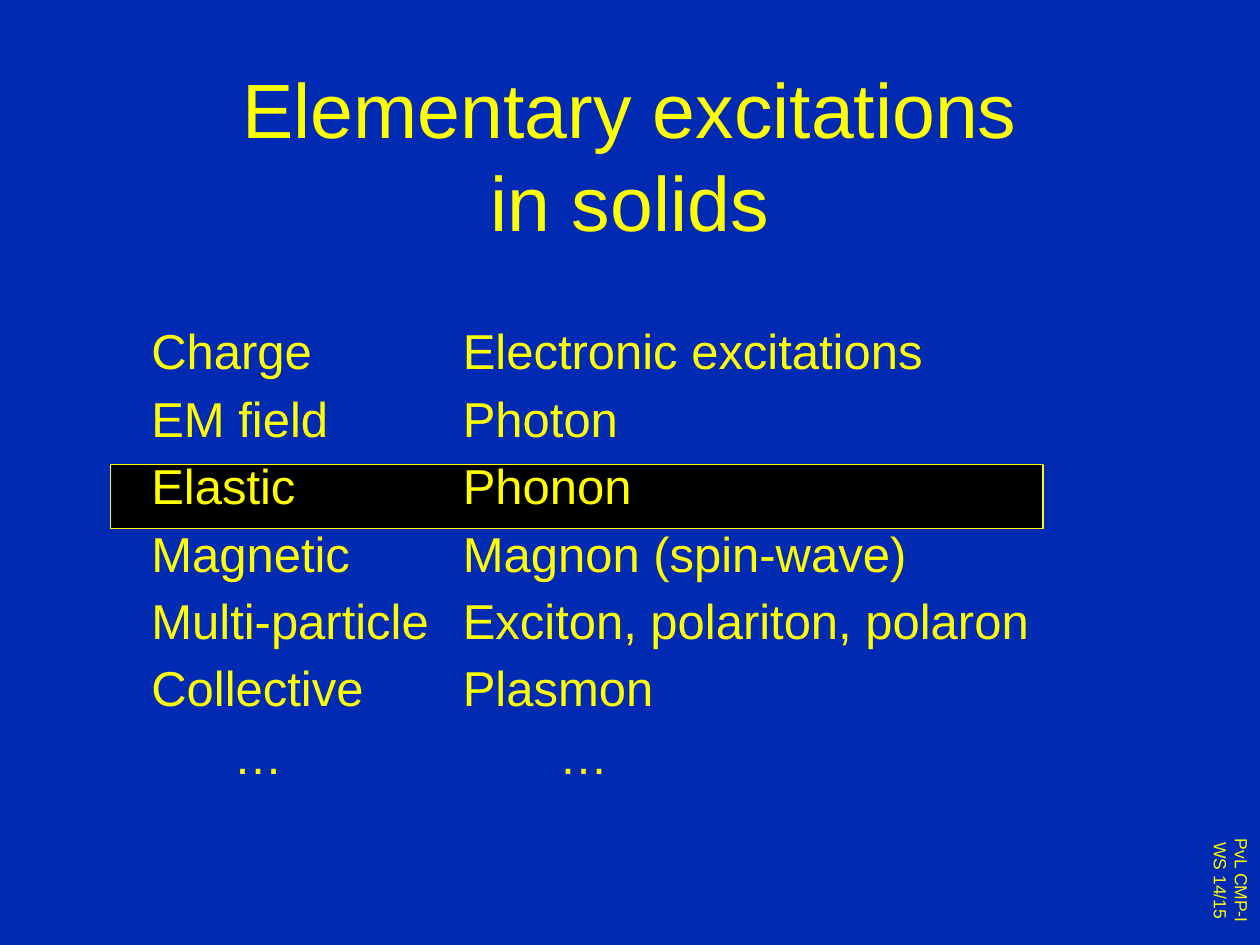
from pptx import Presentation
from pptx.dml.color import RGBColor
from pptx.enum.shapes import MSO_SHAPE
from pptx.enum.text import MSO_ANCHOR, PP_ALIGN
from pptx.oxml.ns import qn
from pptx.util import Pt

CENTER = PP_ALIGN.CENTER
MIDDLE = MSO_ANCHOR.MIDDLE
TOP = MSO_ANCHOR.TOP
RECTANGLE = MSO_SHAPE.RECTANGLE

BLUE = RGBColor(0x00, 0x2A, 0xB2)
YELLOW = RGBColor(0xFF, 0xFF, 0x00)
BLACK = RGBColor(0x00, 0x00, 0x00)
FONT = "Arial"
NO_GRID_STYLE = "{2D5ABB26-0587-4C30-8999-92F81FD0307C}"

TITLE = "Elementary excitations\vin solids"
COURSE = "PvL CMP-I\nWS 14/15"
EXCITATIONS = [
    ("Charge", "Electronic excitations"),
    ("EM field", "Photon"),
    ("Elastic", "Phonon"),
    ("Magnetic", "Magnon (spin-wave)"),
    ("Multi-particle", "Exciton, polariton, polaron"),
    ("Collective", "Plasmon"),
    ("…", "…"),
]
COLUMN_WIDTHS = (178, 434)
ELLIPSIS_INDENTS = (47, 55)
ROW_HEIGHT = 38.5
CELL_MARGIN = 5.5


def format_text(text_frame, size, alignment=None):
    for paragraph in text_frame.paragraphs:
        paragraph.alignment = alignment
        paragraph.font.name = FONT
        paragraph.font.size = Pt(size)
        paragraph.font.color.rgb = YELLOW


def add_title(slide):
    title = slide.shapes.title
    title.left, title.top, title.width, title.height = Pt(54), Pt(43.2), Pt(612), Pt(90)
    title.text_frame.text = TITLE
    title.text_frame.vertical_anchor = MIDDLE
    format_text(title.text_frame, 44, CENTER)


def add_course_label(slide):
    label = slide.shapes.add_textbox(Pt(680.4), Pt(475.2), Pt(38.9), Pt(56.2))
    label.text_frame.text = COURSE
    label.text_frame.word_wrap = False
    label.text_frame._txBody.bodyPr.set("vert", "vert")
    format_text(label.text_frame, 10, CENTER)


def add_highlight(slide):
    highlight = slide.shapes.add_shape(RECTANGLE, Pt(63), Pt(265.5), Pt(533), Pt(36.5))
    highlight.shadow.inherit = False
    highlight.fill.solid()
    highlight.fill.fore_color.rgb = BLACK
    highlight.line.color.rgb = YELLOW
    highlight.line.width = Pt(0.75)


def add_excitation_table(slide):
    row_count = len(EXCITATIONS)
    frame = slide.shapes.add_table(
        row_count, len(COLUMN_WIDTHS), Pt(81), Pt(182.2),
        Pt(sum(COLUMN_WIDTHS)), Pt(ROW_HEIGHT * row_count))
    table = frame.table
    table.first_row = table.horz_banding = False
    table._tbl.tblPr.find(qn("a:tableStyleId")).text = NO_GRID_STYLE
    for column, width in zip(table.columns, COLUMN_WIDTHS):
        column.width = Pt(width)
    for row, entries in zip(table.rows, EXCITATIONS):
        row.height = Pt(ROW_HEIGHT)
        for cell, text, indent in zip(row.cells, entries, ELLIPSIS_INDENTS):
            cell.text = text
            cell.fill.background()
            cell.vertical_anchor = TOP
            cell.margin_left = Pt(CELL_MARGIN + (indent if text == "…" else 0))
            cell.margin_right = Pt(CELL_MARGIN)
            cell.margin_top, cell.margin_bottom = Pt(3.9), Pt(0)
            format_text(cell.text_frame, 28)


def main():
    presentation = Presentation()
    presentation.slide_width, presentation.slide_height = Pt(720), Pt(540)
    slide = presentation.slides.add_slide(presentation.slide_layouts[5])
    slide.background.fill.solid()
    slide.background.fill.fore_color.rgb = BLUE
    add_course_label(slide)
    add_highlight(slide)
    add_title(slide)
    add_excitation_table(slide)
    presentation.save("out.pptx")


if __name__ == "__main__":
    main()
